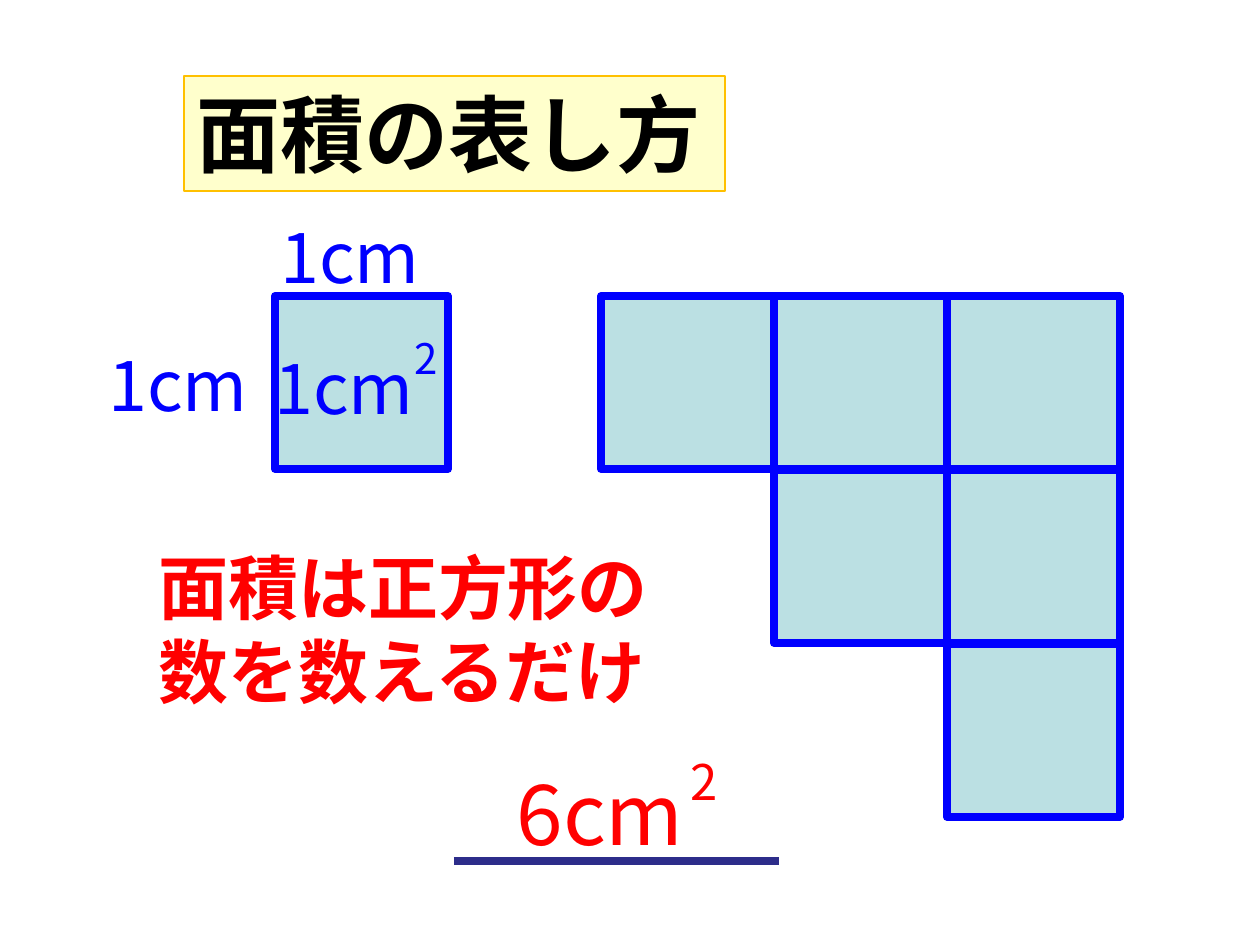
from dataclasses import dataclass

from lxml.etree import SubElement
from pptx import Presentation
from pptx.dml.color import RGBColor
from pptx.enum.shapes import MSO_CONNECTOR, MSO_SHAPE
from pptx.enum.text import MSO_ANCHOR, MSO_AUTO_SIZE, PP_ALIGN
from pptx.oxml.ns import qn
from pptx.util import Emu, Pt

PX_PER_INCH = 126
FONT = "Noto Sans CJK JP"
COLORS = {
    "blue": "0000FF",
    "red": "FF0000",
    "black": "000000",
    "square": "BBE0E3",
    "title_fill": "FFFFCC",
    "title_line": "FFC000",
    "underline": "2D2D8A",
}
SQUARE = 173  # side of one unit square
STEP_X, STEP_Y = 173, 174


@dataclass
class Label:
    text: str
    x: int
    y: int
    w: int
    h: int
    size: int
    color: str
    bold: bool = False


TITLE = Label("面積の表し方", 184, 76, 541, 115, 48, "black", True)
LABELS = [
    Label("1cm", 96, 335, 186, 97, 40, "blue"),
    Label("1cm", 268, 207, 186, 97, 40, "blue"),
    Label("6cm", 504, 755, 248, 115, 48, "red"),
    Label("2", 678, 745, 74, 72, 28, "red"),
    Label("面積は正方形の数を数えるだけ", 146, 538, 541, 183, 40, "red", True),
    Label("1cm", 262, 338, 190, 97, 40, "blue"),
    Label("2", 402, 326, 74, 63, 24, "blue"),
]


def px(n: int) -> Emu:
    return Emu(round(n * 914400 / PX_PER_INCH))


def rgb(name: str) -> RGBColor:
    return RGBColor.from_string(COLORS[name])


def paint(sp, fill: str, line: str, width: float) -> None:
    sp.fill.solid()
    sp.fill.fore_color.rgb = rgb(fill)
    sp.line.color.rgb = rgb(line)
    sp.line.width = Pt(width)


def write(sp, label: Label) -> None:
    tf = sp.text_frame
    tf.text = label.text
    tf.word_wrap = True
    tf.auto_size = MSO_AUTO_SIZE.NONE
    tf.vertical_anchor = MSO_ANCHOR.TOP
    p = tf.paragraphs[0]
    p.alignment = PP_ALIGN.LEFT
    r = p.runs[0]
    r.font.size = Pt(label.size)
    r.font.bold = label.bold
    r.font.color.rgb = rgb(label.color)
    r.font.name = FONT
    # East Asian text takes its font from a separate element
    SubElement(r.font._element, qn("a:ea"), typeface=FONT)


def add_label(s, label: Label) -> None:
    box = map(px, (label.x, label.y, label.w, label.h))
    write(s.shapes.add_textbox(*box), label)


def add_square(s, x: int, y: int) -> None:
    sp = s.shapes.add_shape(MSO_SHAPE.RECTANGLE, px(x), px(y), px(SQUARE), px(SQUARE))
    sp.shadow.inherit = False
    paint(sp, "square", "blue", 4.5)


def add_underline(s, x1: int, x2: int, y: int) -> None:
    line = s.shapes.add_connector(MSO_CONNECTOR.STRAIGHT, px(x1), px(y), px(x2), px(y))
    line.line.color.rgb = rgb("underline")
    line.line.width = Pt(4.5)
    SubElement(line._element.spPr, qn("a:effectLst"))


def main() -> None:
    prs = Presentation()
    prs.slide_width, prs.slide_height = px(1260), px(945)
    s = prs.slides.add_slide(prs.slide_layouts[5])

    # Title
    title = s.shapes.title
    title.left, title.top = px(TITLE.x), px(TITLE.y)
    title.width, title.height = px(TITLE.w), px(TITLE.h)
    paint(title, "title_fill", "title_line", 0.75)
    write(title, TITLE)

    # Unit square, then the staircase: each row starts one column later
    add_square(s, 275, 296)
    for row in range(3):
        for col in range(row, 3):
            add_square(s, 601 + col * STEP_X, 296 + row * STEP_Y)

    # Labels and answer
    for label in LABELS:
        add_label(s, label)
    add_underline(s, 454, 779, 861)

    prs.save("out.pptx")


if __name__ == "__main__":
    main()
